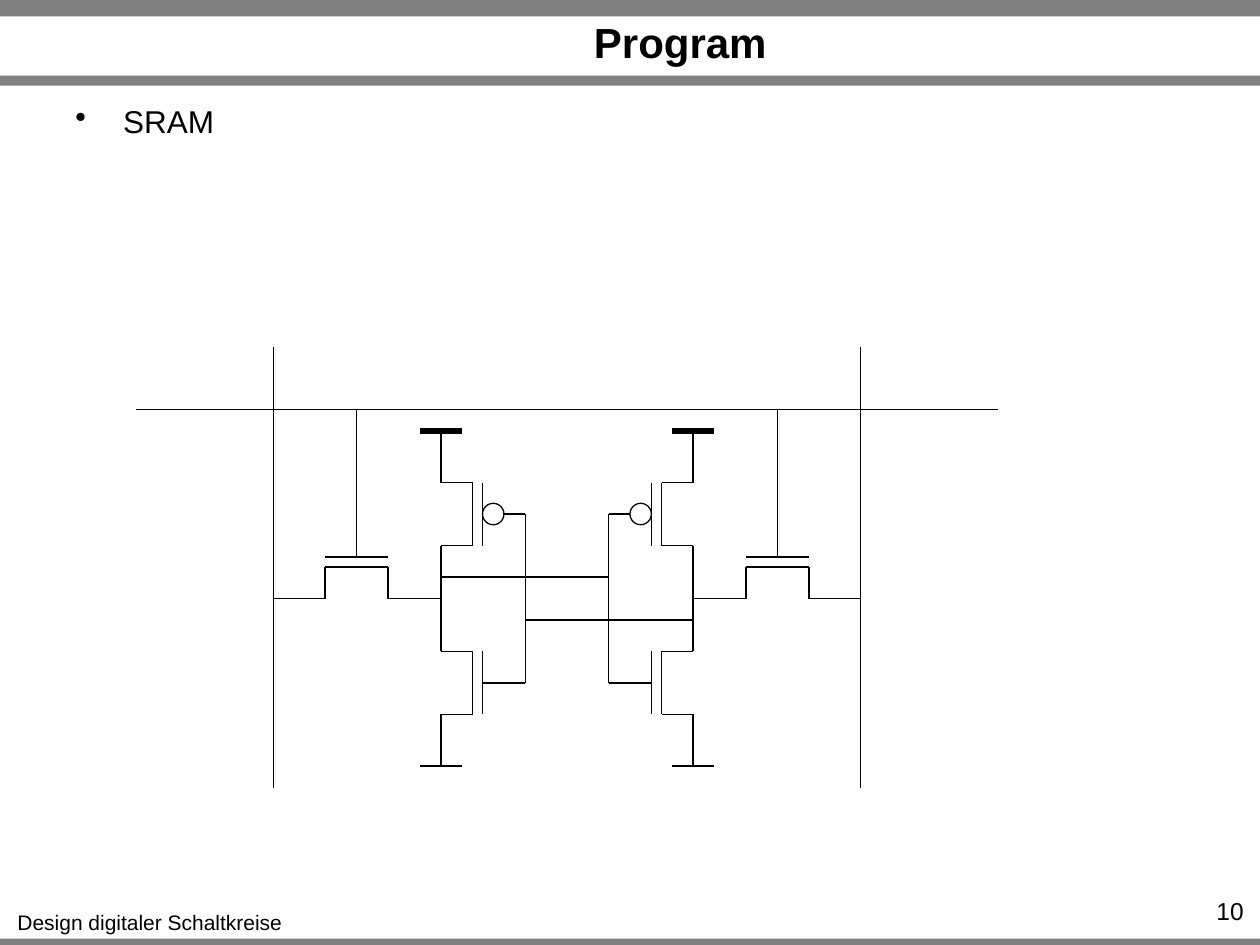
from lxml import etree
from pptx import Presentation
from pptx.dml.color import RGBColor
from pptx.enum.shapes import MSO_CONNECTOR, MSO_SHAPE
from pptx.enum.text import MSO_ANCHOR, PP_ALIGN
from pptx.oxml.ns import qn
from pptx.util import Inches, Pt

STRAIGHT = MSO_CONNECTOR.STRAIGHT
RECTANGLE, OVAL = MSO_SHAPE.RECTANGLE, MSO_SHAPE.OVAL
TOP, MIDDLE = MSO_ANCHOR.TOP, MSO_ANCHOR.MIDDLE
LEFT, CENTER, RIGHT = PP_ALIGN.LEFT, PP_ALIGN.CENTER, PP_ALIGN.RIGHT
BLACK, GRAY = "000000", "808080"


def color(hex_string):
    return RGBColor.from_string(hex_string)


def add_text(slide, box, text, size, bold=False, align=LEFT, anchor=TOP,
             wrap=True, bullet=None, indent=0.38):
    frame = slide.shapes.add_textbox(*map(Inches, box)).text_frame
    frame.word_wrap = wrap
    frame.vertical_anchor = anchor
    paragraph = frame.paragraphs[0]
    paragraph.alignment = align
    if bullet:
        properties = paragraph._p.get_or_add_pPr()
        properties.set("marL", str(Inches(indent)))
        properties.set("indent", str(-Inches(indent)))
        etree.SubElement(properties, qn("a:buChar")).set("char", bullet)
    run = paragraph.add_run()
    run.text = text
    run.font.name = "Arial"
    run.font.size = Pt(size)
    run.font.bold = bold
    run.font.color.rgb = color(BLACK)


def add_bar(slide, box):
    bar = slide.shapes.add_shape(RECTANGLE, *map(Inches, box))
    bar.shadow.inherit = False
    bar.fill.solid()
    bar.fill.fore_color.rgb = color(GRAY)
    bar.line.fill.background()


def add_wire(slide, x1, y1, x2, y2, width=0.75):
    wire = slide.shapes.add_connector(STRAIGHT, *map(Inches, (x1, y1, x2, y2)))
    wire.line.color.rgb = color(BLACK)
    wire.line.width = Pt(width)
    etree.SubElement(wire._element.spPr, qn("a:effectLst"))


def add_header(slide, box):
    left, top, width, height = box
    add_bar(slide, (left, top, width, 0.13))
    add_bar(slide, (left, top + height - 0.08, width, 0.08))
    add_text(slide, (left + 1.3, top + 0.14, 8.2, 0.38), "Program", 24,
             bold=True, align=CENTER, anchor=MIDDLE)


def add_footer(slide, box):
    left, top, width, height = box
    add_bar(slide, (left, top + height - 0.08, width, 0.08))
    add_text(slide, (left + 0.03, top + 0.11, 2.32, 0.3),
             "Design digitaler Schaltkreise", 12, align=CENTER, wrap=False)
    add_text(slide, (left + width - 0.9, top, 0.87, 0.24), "10", 14,
             align=RIGHT)


def add_half_cell(slide, center, top, side):
    """Draw one half; side is -1 for left, 1 for right of the center."""
    # Distances from the center line
    gate_wire, bubble, gate, channel, node = 0.33, 0.5, 0.67, 0.75, 1
    pass_inner, pass_middle, pass_outer, bit_line = 1.42, 1.67, 1.92, 2.33
    # Depths below the top
    word_line, supply, ground, node_level = 0.5, 0.67, 3.33, 2
    pmos, nmos, channel_length = 1.08, 2.42, 0.5
    pmos_gate, nmos_gate = 1.33, 2.67
    pass_gate, pass_channel = 1.67, 1.75

    def wire(d1, y1, d2, y2, width=0.75):
        add_wire(slide, center + side * d1, top + y1,
                 center + side * d2, top + y2, width)

    # Bit line
    wire(bit_line, 0, bit_line, 3.5)

    # Inverter transistors
    for start in (pmos, nmos):
        end = start + channel_length
        wire(channel, start, channel, end)
        wire(gate, start, gate, end)
        for y in (start, end):
            wire(channel, y, node, y)

    # Supply, storage node and ground
    wire(node, supply, node, pmos)
    wire(node, pmos + channel_length, node, nmos)
    wire(node, nmos + channel_length, node, ground)
    wire(node - 0.17, supply, node + 0.17, supply, width=3)
    wire(node - 0.17, ground, node + 0.17, ground)

    # Inverter input with the PMOS bubble
    wire(bubble, pmos_gate, gate_wire, pmos_gate)
    wire(gate, nmos_gate, gate_wire, nmos_gate)
    wire(gate_wire, pmos_gate, gate_wire, nmos_gate)
    diameter = gate - bubble
    bubble_left = center + side * (bubble + gate) / 2 - diameter / 2
    circle = slide.shapes.add_shape(
        OVAL, Inches(bubble_left), Inches(top + pmos_gate - diameter / 2),
        Inches(diameter), Inches(diameter))
    circle.shadow.inherit = False
    circle.fill.background()
    circle.line.color.rgb = color(BLACK)
    circle.line.width = Pt(0.75)

    # Access transistor
    wire(pass_inner, pass_gate, pass_outer, pass_gate)
    wire(pass_inner, pass_channel, pass_outer, pass_channel)
    wire(pass_middle, word_line, pass_middle, pass_gate)
    for inner, outer in ((pass_inner, node), (pass_outer, bit_line)):
        wire(inner, pass_channel, inner, node_level)
        wire(inner, node_level, outer, node_level)

    # Cross coupling to the other half
    coupling = node_level + side * 0.17
    wire(node, coupling, -gate_wire, coupling)


def add_sram_cell(slide, box):
    left, top, width, _ = box
    add_wire(slide, left, top + 0.5, left + width, top + 0.5)  # word line
    for side in (-1, 1):
        add_half_cell(slide, left + width / 2, top, side)


def main():
    deck = Presentation()
    deck.slide_width, deck.slide_height = Inches(10), Inches(7.5)
    slide = deck.slides.add_slide(deck.slide_layouts[6])
    add_header(slide, (0, 0, 10, 0.68))
    add_text(slide, (0.5, 0.76, 9, 0.66), "SRAM", 18, bullet="•")
    add_sram_cell(slide, (1.08, 2.75, 6.84, 3.5))
    add_footer(slide, (0, 7.06, 10, 0.47))
    deck.save("out.pptx")


if __name__ == "__main__":
    main()
